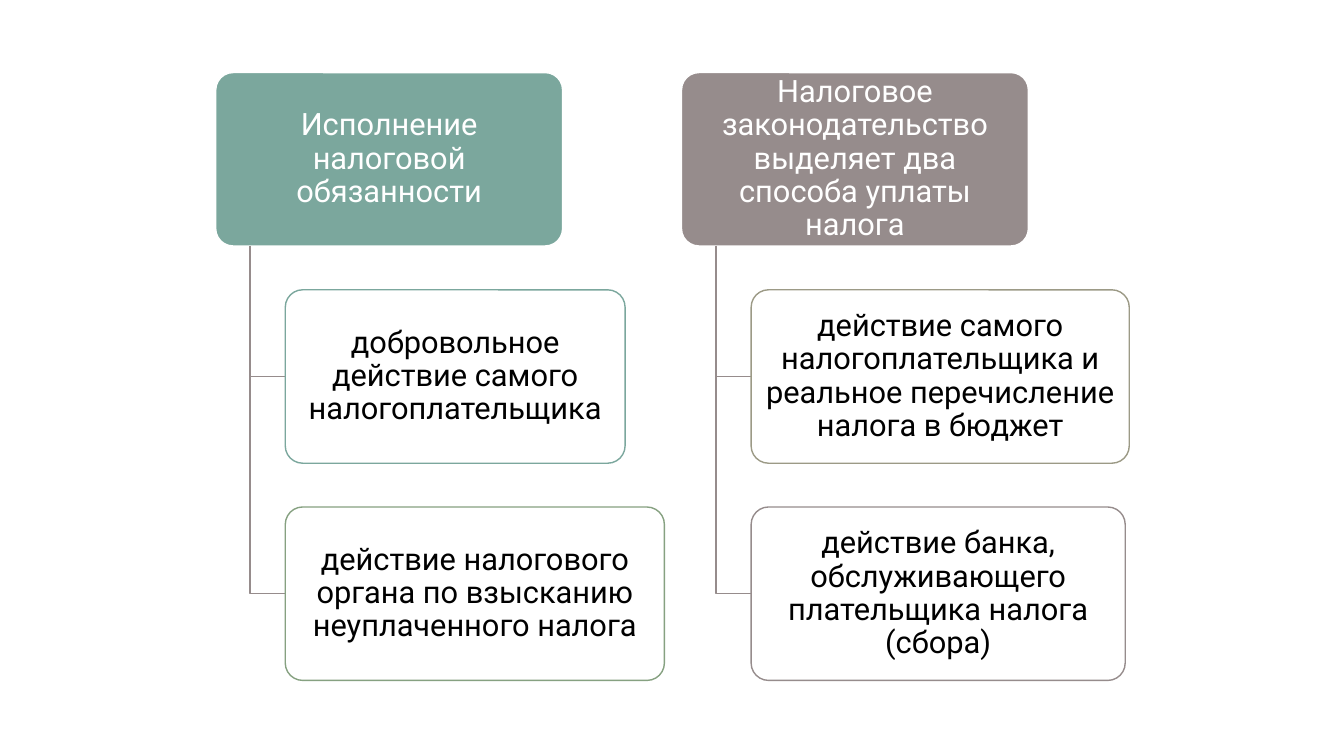
from pptx import Presentation
from pptx.dml.color import RGBColor
from pptx.enum.shapes import MSO_SHAPE as Preset
from pptx.enum.text import MSO_ANCHOR as Anchor, PP_ALIGN as Align
from pptx.util import Inches, Pt

WHITE = RGBColor(0xFF, 0xFF, 0xFF)
BLACK = RGBColor(0x00, 0x00, 0x00)
TEAL = RGBColor(0x7B, 0xA7, 0x9D)
GREEN = RGBColor(0x86, 0xA1, 0x81)
OLIVE = RGBColor(0x9C, 0x9A, 0x86)
TAUPE = RGBColor(0x96, 0x8C, 0x8C)

TOP = 0.72
CARD_HEIGHT = 1.72
ROW_STEP = 2.155
HEADER_WIDTH = 3.44
TRUNK_INDENT = 0.34
BRANCH_INDENT = 0.69

BRANCHES = [
    (2.14, "Исполнение налоговой обязанности", TEAL, [
        ("добровольное действие самого налогоплательщика", 3.37, TEAL),
        ("действие налогового органа по взысканию неуплаченного налога", 3.76, GREEN),
    ]),
    (6.76, "Налоговое законодательство выделяет два способа уплаты налога", TAUPE, [
        ("действие самого налогоплательщика и реальное перечисление налога в бюджет",
         3.75, OLIVE),
        ("действие банка, обслуживающего плательщика налога (сбора)", 3.71, TAUPE),
    ]),
]


def add_card(slide, left, top, width, text, fill, outline, ink):
    card = slide.shapes.add_shape(Preset.ROUNDED_RECTANGLE, Inches(left), Inches(top),
                                  Inches(width), Inches(CARD_HEIGHT))
    card.adjustments[0] = 0.1
    card.shadow.inherit = False
    card.fill.solid()
    card.fill.fore_color.rgb = fill
    card.line.color.rgb = outline
    card.line.width = Pt(1)

    frame = card.text_frame
    frame.word_wrap = True
    frame.vertical_anchor = Anchor.MIDDLE
    frame.margin_left = frame.margin_right = Inches(0.05)
    frame.margin_top = frame.margin_bottom = Inches(0.03)
    paragraph = frame.paragraphs[0]
    paragraph.alignment = Align.CENTER
    paragraph.line_spacing = 0.9
    run = paragraph.add_run()
    run.text = text
    run.font.name = "Roboto"
    run.font.size = Pt(22)
    run.font.color.rgb = ink


def add_elbow(slide, trunk, start, end, branch):
    builder = slide.shapes.build_freeform(Inches(trunk), Inches(start))
    builder.add_line_segments([(Inches(trunk), Inches(end)),
                               (Inches(branch), Inches(end))], close=False)
    elbow = builder.convert_to_shape()
    elbow.shadow.inherit = False
    elbow.fill.background()
    elbow.line.color.rgb = TAUPE
    elbow.line.width = Pt(1)


def add_branch(slide, left, heading, color, details):
    add_card(slide, left, TOP, HEADER_WIDTH, heading, color, WHITE, WHITE)
    for row, (text, width, outline) in enumerate(details, start=1):
        top = TOP + row * ROW_STEP
        add_elbow(slide, left + TRUNK_INDENT, TOP + CARD_HEIGHT,
                  top + CARD_HEIGHT / 2, left + BRANCH_INDENT)
        add_card(slide, left + BRANCH_INDENT, top, width, text, WHITE, outline, BLACK)


def main():
    deck = Presentation()
    deck.slide_width = Inches(13.33)
    deck.slide_height = Inches(7.5)
    slide = deck.slides.add_slide(deck.slide_layouts[6])
    for branch in BRANCHES:
        add_branch(slide, *branch)
    deck.save("out.pptx")


if __name__ == "__main__":
    main()
